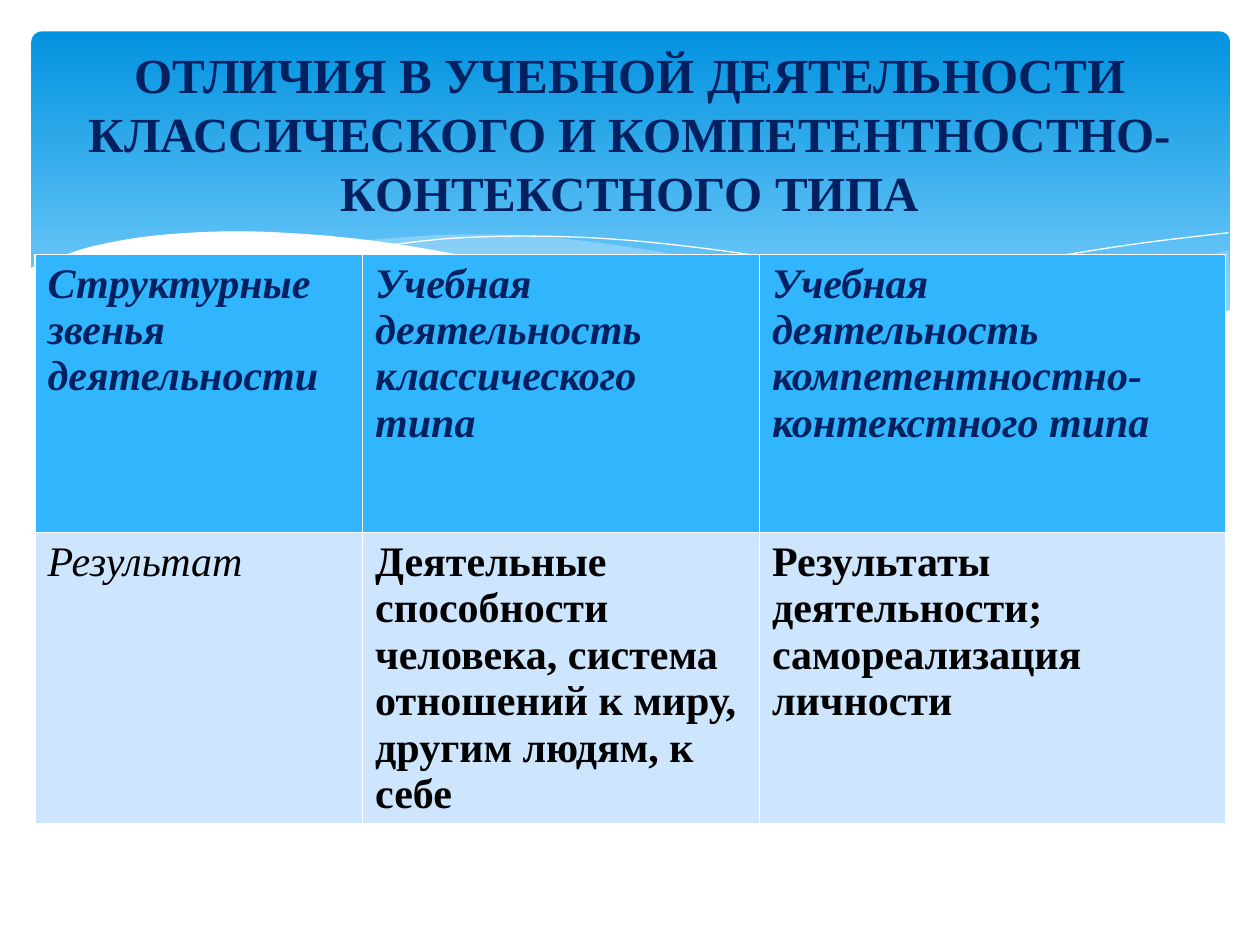
import pptx
import pptx.dml.color
import pptx.enum.shapes
import pptx.enum.text
import pptx.oxml.ns
import pptx.util
from lxml import etree

COLOURS = {
    "sky": "0293E0",
    "horizon": "83D3FE",
    "mist": "C6E7FC",
    "white": "FFFFFF",
    "navy": "002060",
    "black": "000000",
    "header": "31B6FD",
    "body": "CEE5FE",
}

HEADING = (
    "ОТЛИЧИЯ В УЧЕБНОЙ ДЕЯТЕЛЬНОСТИ КЛАССИЧЕСКОГО И "
    "КОМПЕТЕНТНОСТНО-КОНТЕКСТНОГО ТИПА"
)
COMPARISON = [
    [
        "Структурные звенья деятельности",
        "Учебная\nдеятельность классического типа",
        "Учебная\nдеятельность компетентностно-контекстного типа",
    ],
    [
        "Результат",
        "Деятельные способности человека, система отношений к миру, другим людям, к себе",
        "Результаты деятельности; самореализация личности",
    ],
]
COLUMN_WIDTHS = [187.2, 226.8, 266.4]
ROW_HEIGHTS = [159, 105]

RIGHT_SWELL = [
    [(702.5, 143), (673, 149), (620, 160.5), (542, 178.5), (476, 191)],
    [(476, 191), (527, 197), (578, 200), (628, 198), (673, 188), (702.5, 178)],
]
MIDDLE_SWELL = [
    [(643, 196.5), (558, 183), (453, 160), (389, 146), (318, 136), (260, 134), (206, 137.5)],
    [(206, 137.5), (276, 149), (323, 160), (408, 178.5), (479, 191.5), (548, 199),
     (603, 200), (643, 196.5)],
]
LONG_RIPPLE = [
    [(222.5, 140), (261, 136), (311, 135), (367, 138), (438, 147), (523, 163),
     (598, 181), (653, 196)],
]
SHORT_RIPPLE = [[(441, 185), (500, 169), (580, 151), (645, 140), (702, 133)]]
FOAM = [
    [(703.5, 177), (669, 188.5), (621.5, 196.5), (571, 199), (510, 196), (434, 183),
     (322, 158), (227, 139.5), (152, 132.5), (95, 134), (54, 140.5), (29, 149), (16.5, 153.5)],
    [(16.5, 237)],
    [(703.5, 237)],
]


def rgb(name):
    """Return the named colour."""
    return pptx.dml.color.RGBColor.from_string(COLOURS[name])


def apply(target, values):
    """Set each attribute of the target from a dict."""
    for attribute, value in values.items():
        setattr(target, attribute, value)


def format_text(frame, colour, **values):
    """Format every run of a text frame."""
    for paragraph in frame.paragraphs:
        for run in paragraph.runs:
            apply(run.font, {"name": "Times New Roman", **values})
            run.font.color.rgb = rgb(colour)


def smooth(knots, steps=6):
    """Return points on a Catmull-Rom curve through the knots."""
    padded = [knots[0], *knots, knots[-1]]
    points = [knots[0]]
    for a, b, c, d in zip(padded, padded[1:], padded[2:], padded[3:]):
        for step in range(1, steps + 1):
            t = step / steps
            points.append(tuple(
                b[i] + t / 2 * (c[i] - a[i]
                                + t * (2 * a[i] - 5 * b[i] + 4 * c[i] - d[i])
                                + t * t * (3 * b[i] - a[i] - 3 * c[i] + d[i]))
                for i in (0, 1)))
    return points


def add_curve(slide, curves, close):
    """Draw smoothed curves as one outline."""
    points = [
        (pptx.util.Pt(x), pptx.util.Pt(y))
        for knots in curves for x, y in smooth(knots)
    ]
    builder = slide.shapes.build_freeform(*points[0])
    builder.add_line_segments(points[1:], close=close)
    curve = builder.convert_to_shape()
    curve.shadow.inherit = False
    return curve


def add_swell(slide, curves, colour, opacity=100):
    """Add a filled wave."""
    swell = add_curve(slide, curves, True)
    swell.line.fill.background()
    swell.fill.solid()
    swell.fill.fore_color.rgb = rgb(colour)
    if opacity < 100:
        tint = swell.fill._xPr.find(".//" + pptx.oxml.ns.qn("a:srgbClr"))
        etree.SubElement(tint, pptx.oxml.ns.qn("a:alpha"), val=str(opacity * 1000))


def add_ripple(slide, curves):
    """Add a hairline wave."""
    ripple = add_curve(slide, curves, False)
    ripple.fill.background()
    ripple.line.color.rgb = rgb("white")
    ripple.line.width = pptx.util.Pt(0)


def add_banner(slide):
    """Add the rounded gradient panel behind the heading."""
    banner = slide.shapes.add_shape(
        pptx.enum.shapes.MSO_SHAPE.ROUNDED_RECTANGLE,
        *map(pptx.util.Pt, (18, 18, 684.7, 194.4)))
    banner.adjustments[0] = 0.03
    banner.shadow.inherit = False
    banner.line.fill.background()
    banner.fill.gradient()
    banner.fill.gradient_angle = 270
    stops = [("sky", 0), ("horizon", 0.9)]
    for stop, (colour, position) in zip(banner.fill.gradient_stops, stops):
        stop.color.rgb = rgb(colour)
        stop.position = position


def add_comparison(slide):
    """Add the table comparing the two types of learning."""
    comparison = slide.shapes.add_table(
        len(ROW_HEIGHTS), len(COLUMN_WIDTHS),
        *map(pptx.util.Pt, (20, 145.4, sum(COLUMN_WIDTHS), sum(ROW_HEIGHTS)))).table
    for column, width in zip(comparison.columns, COLUMN_WIDTHS):
        column.width = pptx.util.Pt(width)
    for row, height in zip(comparison.rows, ROW_HEIGHTS):
        row.height = pptx.util.Pt(height)
    for r, wordings in enumerate(COMPARISON):
        for c, wording in enumerate(wordings):
            cell = comparison.cell(r, c)
            cell.text = wording
            cell.fill.solid()
            cell.fill.fore_color.rgb = rgb("body" if r else "header")
            format_text(
                cell.text_frame, "black" if r else "navy", size=pptx.util.Pt(24),
                bold=r == 0 or c > 0, italic=r == 0 or c == 0)


def set_heading(slide):
    """Fill the title placeholder and bring it to the front."""
    heading = slide.shapes.title
    slide.shapes._spTree.append(heading._element)
    apply(heading, {
        "left": pptx.util.Pt(36), "top": pptx.util.Pt(26.6),
        "width": pptx.util.Pt(648), "height": pptx.util.Pt(98.6),
    })
    heading.text_frame.text = HEADING
    apply(heading.text_frame, {
        "word_wrap": True,
        "auto_size": pptx.enum.text.MSO_AUTO_SIZE.NONE,
        "vertical_anchor": pptx.enum.text.MSO_ANCHOR.MIDDLE,
    })
    heading.text_frame.paragraphs[0].alignment = pptx.enum.text.PP_ALIGN.CENTER
    format_text(heading.text_frame, "navy", size=pptx.util.Pt(28), bold=True)


def main():
    """Build and save the slide."""
    deck = pptx.Presentation()
    apply(deck, {"slide_width": pptx.util.Pt(720), "slide_height": pptx.util.Pt(540)})
    slide = deck.slides.add_slide(deck.slide_layouts[5])
    add_banner(slide)
    add_swell(slide, RIGHT_SWELL, "mist", 29)
    add_swell(slide, MIDDLE_SWELL, "mist", 40)
    add_ripple(slide, LONG_RIPPLE)
    add_ripple(slide, SHORT_RIPPLE)
    add_swell(slide, FOAM, "white")
    add_comparison(slide)
    set_heading(slide)
    deck.save("out.pptx")


if __name__ == "__main__":
    main()
